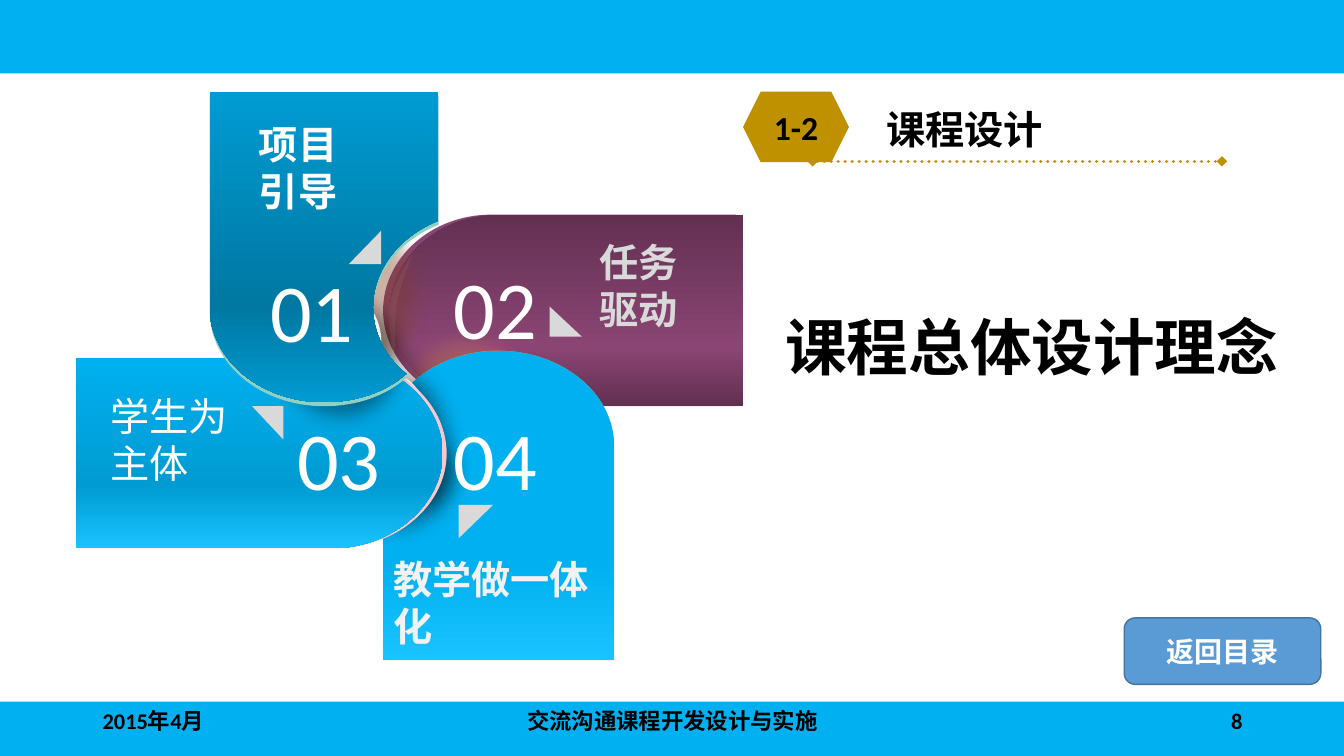
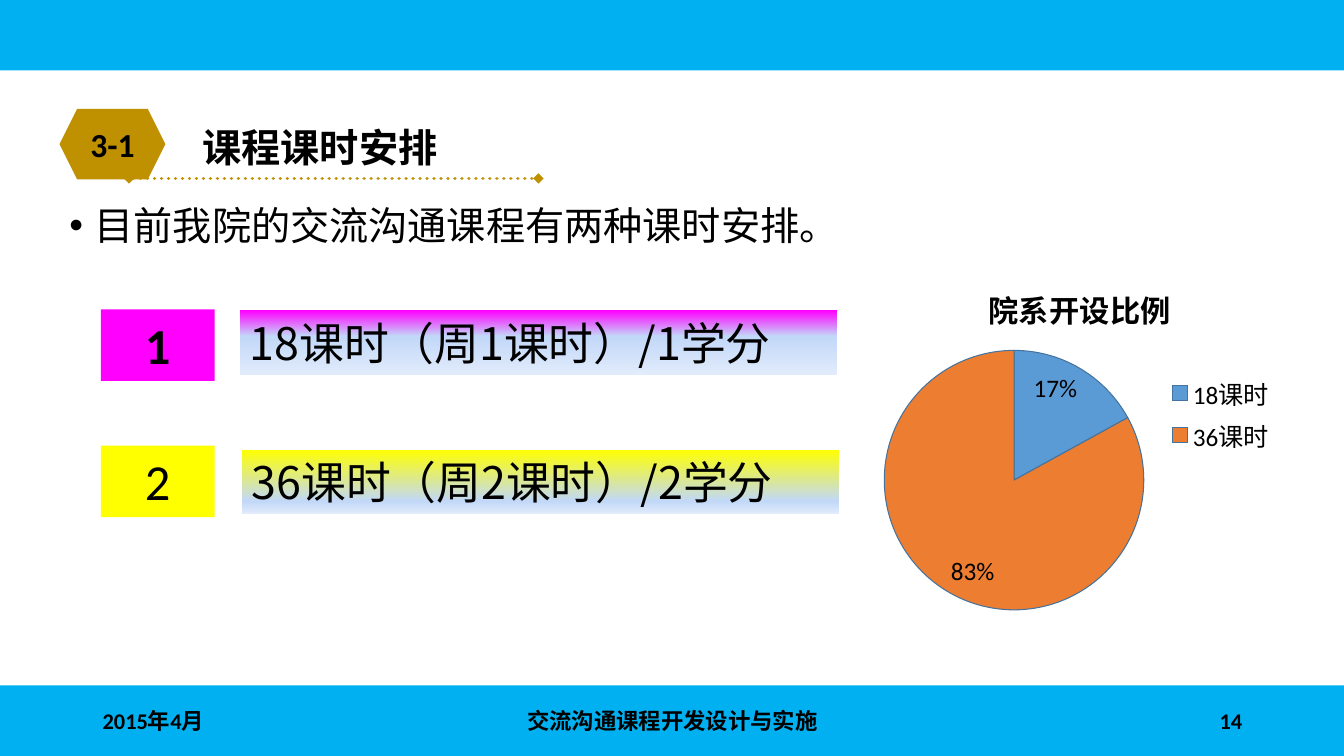
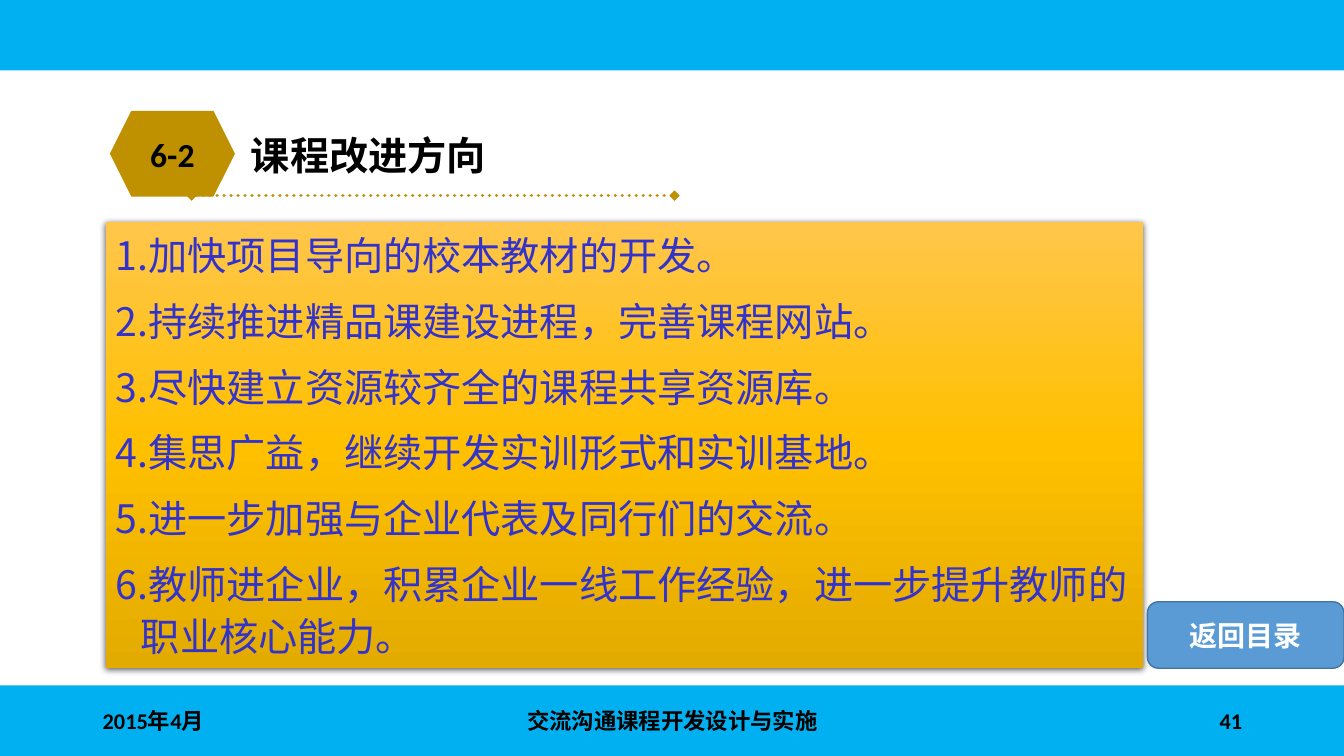
from lxml import etree
from pptx import Presentation
from pptx import util as u
from pptx.chart.data import CategoryChartData
from pptx.dml.color import RGBColor
from pptx.enum import chart as charts, dml, shapes, text
from pptx.oxml import parse_xml
from pptx.oxml.ns import qn

PX = 9144
WIDTH, HEIGHT = 1333, 750
LATIN, CJK, TITLE_FONT = "Calibri", "Noto Sans CJK SC", "Noto Sans CJK JP"

BLACK = RGBColor(0, 0, 0)
WHITE = RGBColor(255, 255, 255)
SKY = RGBColor(0x00, 0xB0, 0xF0)
GOLD = RGBColor(0xBF, 0x90, 0x00)
BUTTON = RGBColor(0x5B, 0x9B, 0xD5)
EDGE = RGBColor(0x43, 0x73, 0x9E)
ORANGE = RGBColor(0xED, 0x7D, 0x31)
PLUM = RGBColor(0x8B, 0x45, 0x74)
DARK_PLUM = RGBColor(0x62, 0x30, 0x51)
BLUE = RGBColor(0x00, 0x9B, 0xD2)
DEEP_BLUE = RGBColor(0x00, 0x78, 0xA2)
LIGHT_BLUE = RGBColor(0x19, 0xC3, 0xFF)
OLIVE = RGBColor(0xD3, 0xCF, 0x31)
PINK = RGBColor(0xFA, 0xC6, 0xD2)
MINT = RGBColor(0x90, 0xD0, 0xC2)
PALE = RGBColor(0xF2, 0xF2, 0xF2)
GREY = RGBColor(0xD9, 0xD9, 0xD9)
TAN = RGBColor(0xD0, 0x80, 0x50)
BROWN = RGBColor(0x80, 0x40, 0x20)
MAGENTA = RGBColor(0xFF, 0x00, 0xFF)
YELLOW = RGBColor(0xFF, 0xFF, 0x00)
ICE = RGBColor(0xC2, 0xD8, 0xF8)
PALE_ICE = RGBColor(0xE1, 0xEB, 0xFB)
INDIGO = RGBColor(0x33, 0x33, 0xCC)
AMBER = [(0, RGBColor(0xFF, 0xC6, 0x4B)), (50, RGBColor(0xFF, 0xC0, 0x00)),
         (100, RGBColor(0xE3, 0xAB, 0x00))]

FOOTER = [("2015年4月", (92, 695, 300, 40), "LEFT"),
          ("交流沟通课程开发设计与实施", (442, 695, 450, 40), "CENTER")]
PAGE_BOX = (942, 695, 300, 40)

PETALS = [
    {"outline": [(387, 308), (387, 360, 435, 403, 494, 403), (737, 403), (737, 213),
                 (494, 213), (435, 213, 387, 256, 387, 308)],
     "back": (PLUM, -7, 0),
     "stops": [(0, DARK_PLUM), (69, PLUM), (100, DARK_PLUM)],
     "ellipses": [((439, 342, 75, 101), 270, DARK_PLUM, TAN, 20, 225)]},
    {"outline": [(494, 348), (432, 348, 380, 390, 380, 442), (380, 655), (609, 655),
                 (609, 442), (609, 390, 557, 348, 494, 348)],
     "back": (OLIVE, 0, 0),
     "stops": [(0, SKY), (69, SKY), (100, LIGHT_BLUE)],
     "ellipses": [((336, 404, 131, 64), 258, PALE, BLACK, 10, 0),
                  ((351, 421, 75, 102), 234, PALE, BLACK, 18, 30)]},
    {"outline": [(439, 450), (439, 398, 389, 355, 328, 355), (75, 355), (75, 544),
                 (328, 544), (389, 544, 439, 501, 439, 450)],
     "back": (PINK, 4, 0),
     "stops": [(0, SKY), (67, BLUE), (100, LIGHT_BLUE)],
     "ellipses": [((218, 269, 129, 64), 90, PALE, BROWN, 95, 355),
                  ((256, 278, 123, 115), 27.5, PALE, BLACK, 25, 45)]},
    {"outline": [(435, 219), (435, 91), (208, 91), (208, 305),
                 (208, 357, 259, 399, 321, 399), (354, 399, 382, 389, 403, 371),
                 (382, 354, 370, 330, 370, 305), (370, 267, 397, 234, 435, 219)],
     "back": (MINT, 0, 4),
     "stops": [(0, BLUE), (69, DEEP_BLUE), (100, BLUE)],
     "ellipses": []},
]
GLINT = [(394, 299), (391, 316, 392, 354, 391, 354), (390, 355, 384, 323, 387, 302),
         (390, 281, 408, 253, 409, 253), (410, 252, 397, 282, 394, 299)]
TRIANGLES = [[(378, 229), (346, 262), (378, 262)], [(545, 304), (577, 334), (545, 334)],
             [(281, 436), (250, 403), (281, 403)], [(455, 534), (489, 501), (455, 501)]]
NUMBERS = [("01", 258, 253), ("02", 440, 250), ("03", 285, 400), ("04", 440, 400)]
PETAL_LABELS = [(["项目引导"], (247, 114, 134, 199), WHITE, True),
                (["学生为", "主体"], (100, 384, 157, 246), WHITE, False),
                (["任务驱动"], (585, 231, 119, 199), GREY, True),
                (["教学做一体化"], (380, 546, 222, 104), PALE, True)]

HOUR_PLANS = [("1", "18课时（周1课时）/1学分", True, MAGENTA, 40, (100, 307), (238, 308)),
              ("2", "36课时（周2课时）/2学分", False, YELLOW, 80, (100, 442), (240, 446))]
CHART_TITLE = "院系开设比例"
SHARES = [("18课时", 17, BUTTON), ("36课时", 83, ORANGE)]

IMPROVEMENTS = ["1.加快项目导向的校本教材的开发。",
                "2.持续推进精品课建设进程，完善课程网站。",
                "3.尽快建立资源较齐全的课程共享资源库。",
                "4.集思广益，继续开发实训形式和实训基地。",
                "5.进一步加强与企业代表及同行们的交流。",
                "6.教师进企业，积累企业一线工作经验，进一步提升教师的职业核心能力。"]


def emu(values):
    return [round(value * PX) for value in values]


def add_child(parent, tag, **attributes):
    return etree.SubElement(parent, qn(tag), attributes)


def paint(shape, fill, line=None):
    shape.shadow.inherit = False
    if isinstance(fill, list):
        shape.fill.gradient()
        shape.fill.gradient_angle = 270
        stops = shape._element.spPr.find(".//" + qn("a:gsLst"))
        for stop in list(stops):
            stops.remove(stop)
        for position, color in fill:
            stop = add_child(stops, "a:gs", pos=str(position * 1000))
            add_child(stop, "a:srgbClr", val=str(color))
    else:
        shape.fill.solid()
        shape.fill.fore_color.rgb = fill
    if line is None:
        shape.line.fill.background()
    else:
        shape.line.color.rgb = line
        shape.line.width = u.Pt(1)
    return shape


def cast_shadow(shape, color, alpha, blur, distance, angle):
    effects = shape._element.spPr.find(qn("a:effectLst"))
    shadow = add_child(effects, "a:outerShdw", blurRad=str(blur), dist=str(distance),
                       dir=str(angle * 60000), algn="ctr", rotWithShape="0")
    tint = add_child(shadow, "a:srgbClr", val=str(color))
    add_child(tint, "a:alpha", val=str(alpha * 1000))


def add_figure(slide, kind, box, fill, line=None):
    return paint(slide.shapes.add_shape(kind, *emu(box)), fill, line)


def write(shape, lines, size, color=BLACK, font=LATIN, bold=False, align="LEFT",
          anchor="TOP", spacing=None, before=0, hanging=0, bullet=None):
    frame = shape.text_frame
    frame.word_wrap = True
    frame.vertical_anchor = getattr(text.MSO_ANCHOR, anchor)
    frame.text = "\n".join(lines)
    for index, paragraph in enumerate(frame.paragraphs):
        paragraph.alignment = getattr(text.PP_ALIGN, align)
        if spacing:
            paragraph.line_spacing = spacing
        if before and index:
            paragraph.space_before = u.Pt(before)
        properties = paragraph._p.get_or_add_pPr()
        if hanging:
            properties.set("marL", str(hanging * PX))
            properties.set("indent", str(-hanging * PX))
        if bullet:
            add_child(properties, "a:buFont", typeface="Arial")
            add_child(properties, "a:buChar", char=bullet)
        for run in paragraph.runs:
            run.font.size = u.Pt(size)
            run.font.bold = bold
            run.font.name = font
            run.font.color.rgb = color
            if font != LATIN:
                add_child(run._r.get_or_add_rPr(), "a:ea", typeface=font)


def add_text(slide, box, lines, size, **style):
    write(slide.shapes.add_textbox(*emu(box)), lines, size, **style)


def add_outline(slide, outline, fill, dx=0, dy=0):
    steps = [[emu((x + dx, y + dy)) for x, y in zip(step[::2], step[1::2])]
             for step in outline]
    builder = slide.shapes.build_freeform(*steps[0][-1], scale=1.0)
    builder.add_line_segments([step[-1] for step in steps[1:]], close=True)
    shape = builder.convert_to_shape()
    segments = list(shape._element.spPr.iter(qn("a:lnTo")))
    for segment, step in zip(segments, steps[1:]):
        if len(step) == 3:
            segment.tag = qn("a:cubicBezTo")
            for index, (x, y) in enumerate(step[:2]):
                control = add_child(segment, "a:pt", x=str(x - shape.left),
                                    y=str(y - shape.top))
                segment.insert(index, control)
    return paint(shape, fill)


def new_slide(presentation, page, top_height=70, footer_top=680):
    slide = presentation.slides.add_slide(presentation.slide_layouts[6])
    for top, height in ((0, top_height), (footer_top, HEIGHT - footer_top)):
        add_figure(slide, shapes.MSO_SHAPE.RECTANGLE, (-4, top, 1338, height), SKY)
    for words, box, align in FOOTER + [(page, PAGE_BOX, "RIGHT")]:
        add_text(slide, box, [words], 16, bold=True, align=align, anchor="MIDDLE")
    return slide


def add_heading(slide, number, words, badge_box, rule_ends, words_box):
    badge = add_figure(slide, shapes.MSO_SHAPE.HEXAGON, badge_box, GOLD)
    badge.text_frame.margin_left = badge.text_frame.margin_right = 0
    write(badge, [number], 24, bold=True, align="CENTER", anchor="MIDDLE")
    level = badge_box[1] + badge_box[3] - 1
    rule = slide.shapes.add_connector(shapes.MSO_CONNECTOR.STRAIGHT,
                                      *emu((rule_ends[0], level, rule_ends[1], level)))
    rule.line.color.rgb = GOLD
    rule.line.width = u.Pt(2.5)
    rule.line.dash_style = dml.MSO_LINE.ROUND_DOT
    outline = rule.line._get_or_add_ln()
    outline.set("cap", "rnd")
    for end in ("a:headEnd", "a:tailEnd"):
        add_child(outline, end, type="diamond")
    add_child(rule._element.spPr, "a:effectLst")
    add_text(slide, words_box, [words], 28, font=CJK, bold=True)


def add_return_button(slide, left, top):
    button = add_figure(slide, shapes.MSO_SHAPE.ROUNDED_RECTANGLE, (left, top, 195, 66),
                        BUTTON, EDGE)
    write(button, ["返回目录"], 20, color=WHITE, font=CJK, bold=True, align="CENTER",
          anchor="MIDDLE")


def build_concept(presentation):
    slide = new_slide(presentation, "8", 73, 696)
    for petal in PETALS:
        add_outline(slide, petal["outline"], *petal["back"])
        add_outline(slide, petal["outline"], petal["stops"])
        for box, rotation, fill, shade, distance, angle in petal["ellipses"]:
            ellipse = add_figure(slide, shapes.MSO_SHAPE.OVAL, box, fill)
            ellipse.rotation = rotation
            cast_shadow(ellipse, shade, 40, 20 * PX, distance * PX, angle)
    glint = add_outline(slide, GLINT, PALE)
    tint = glint._element.spPr.find(qn("a:solidFill"))[0]
    add_child(tint, "a:alpha", val="6000")
    for triangle in TRIANGLES:
        add_outline(slide, triangle, GREY)
    for number, left, top in NUMBERS:
        add_text(slide, (left, top, 113, 109), [number], 58.7, color=WHITE)
    for lines, box, color, bold in PETAL_LABELS:
        add_text(slide, box, lines, 28, color=color, font=CJK, bold=bold)
    add_text(slide, (769, 275, 550, 146), ["课程总体设计理念"], 44, font=TITLE_FONT,
             bold=True, anchor="MIDDLE", spacing=0.9)
    add_heading(slide, "1-2", "课程设计", (737, 91, 105, 70), (806, 1212),
                (869, 100, 309, 57))
    add_return_button(slide, 1115, 613)


def place_chart_part(part, index, settings):
    for old in part.findall(qn("c:layout")):
        part.remove(old)
    layout = parse_xml('<c:layout xmlns:c="http://schemas.openxmlformats.org/drawingml/'
                       '2006/chart"><c:manualLayout/></c:layout>')
    for tag, value in settings:
        add_child(layout[0], "c:" + tag, val=value)
    part.insert(index, layout)


def add_share_chart(slide):
    data = CategoryChartData()
    data.categories = [name for name, _, _ in SHARES]
    data.add_series(CHART_TITLE, [value for _, value, _ in SHARES])
    chart = slide.shapes.add_chart(charts.XL_CHART_TYPE.PIE, *emu((864, 200, 411, 422)),
                                   data).chart
    chart.font.size = u.Pt(18)
    chart.font.name = LATIN
    chart.font.color.rgb = BLACK
    chart.has_title = True
    chart.chart_title.text_frame.text = CHART_TITLE
    title_font = chart.chart_title.text_frame.paragraphs[0].runs[0].font
    title_font.size = u.Pt(21.6)
    title_font.bold = True
    title_font.color.rgb = BLACK
    chart.has_legend = True
    chart.legend.position = charts.XL_LEGEND_POSITION.RIGHT
    chart.legend.include_in_layout = False
    plot = chart.plots[0]
    plot.vary_by_categories = True
    plot.has_data_labels = True
    plot.data_labels.show_percentage = True
    plot.data_labels.show_value = False
    plot.data_labels.number_format = "0%"
    plot.data_labels.number_format_is_linked = False
    plot.data_labels.position = charts.XL_LABEL_POSITION.INSIDE_END
    for index, (_, _, color) in enumerate(SHARES):
        point = plot.series[0].points[index].format
        point.fill.solid()
        point.fill.fore_color.rgb = color
        point.line.color.rgb = EDGE
        point.line.width = u.Pt(0.75)
    edges = [("xMode", "edge"), ("yMode", "edge")]
    root = chart._chartSpace.chart
    place_chart_part(root.plotArea, 0, [("layoutTarget", "inner")] + edges +
                     [("x", "0.03"), ("y", "0.35"), ("w", "0.63"), ("h", "0.61")])
    place_chart_part(root.find(qn("c:title")), 1, edges + [("x", "0.27"), ("y", "0.18")])


def build_hours(presentation):
    slide = new_slide(presentation, "14")
    add_text(slide, (59, 200, 1130, 61), ["目前我院的交流沟通课程有两种课时安排。"], 28,
             spacing=0.9, hanging=25, bullet="•")
    add_heading(slide, "3-1", "课程课时安排", (59, 108, 105, 70), (128, 534),
                (191, 117, 309, 57))
    for number, plan, bold, color, middle, number_at, plan_at in HOUR_PLANS:
        tile = add_figure(slide, shapes.MSO_SHAPE.RECTANGLE, number_at + (113, 71), color)
        write(tile, [number], 36, bold=bold, align="CENTER")
        bar = add_figure(slide, shapes.MSO_SHAPE.RECTANGLE, plan_at + (592, 64),
                         [(0, color), (middle, ICE), (100, PALE_ICE)])
        write(bar, [plan], 32, font=CJK)
    add_share_chart(slide)


def build_improvements(presentation):
    slide = new_slide(presentation, "41")
    panel = add_figure(slide, shapes.MSO_SHAPE.RECTANGLE, (105, 220, 1029, 443), AMBER)
    cast_shadow(panel, BLACK, 63, u.Pt(4.5), u.Pt(1.5), 90)
    write(panel, IMPROVEMENTS, 28, color=INDIGO, font=CJK, spacing=1.1, before=10,
          hanging=25)
    add_heading(slide, "6-2", "课程改进方向", (109, 110, 124, 85), (190, 669),
                (239, 125, 548, 57))
    add_return_button(slide, 1138, 597)


def main():
    presentation = Presentation()
    presentation.slide_width, presentation.slide_height = emu((WIDTH, HEIGHT))
    build_concept(presentation)
    build_hours(presentation)
    build_improvements(presentation)
    presentation.save("out.pptx")


if __name__ == "__main__":
    main()
